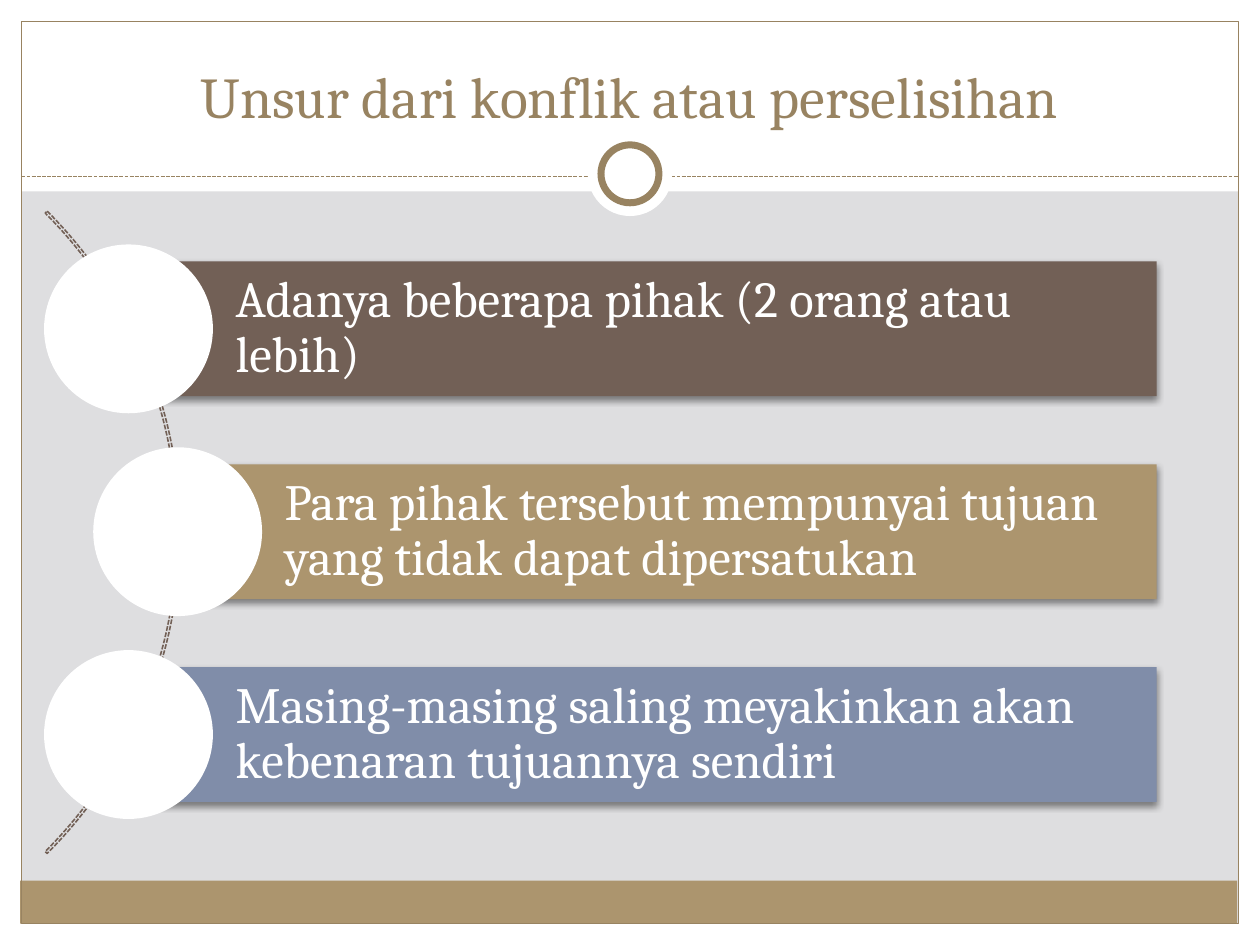
from lxml import etree
from pptx import Presentation
from pptx.dml.color import RGBColor
from pptx.enum.dml import MSO_LINE_DASH_STYLE as Dash
from pptx.enum.shapes import MSO_CONNECTOR as Connector, MSO_SHAPE as Shape
from pptx.enum.text import MSO_ANCHOR as Anchor, MSO_AUTO_SIZE as AutoSize, PP_ALIGN as Align
from pptx.oxml.ns import qn
from pptx.util import Inches, Pt

COLORS = {
    "background": "DEDEE0",
    "white": "FFFFFF",
    "gold": "988361",
    "sand": "AC956E",
    "brown": "726056",
    "blue": "808DA9",
    "shadow": "000000",
}


class SlideBuilder:
    font_name = "Cambria"

    def __init__(self, slide):
        self.slide = slide

    def color(self, name):
        return RGBColor.from_string(COLORS[name])

    def background(self, name):
        fill = self.slide.background.fill
        fill.solid()
        fill.fore_color.rgb = self.color(name)

    def outline(self, line, name, width, dash=None):
        line.color.rgb = self.color(name)
        line.width = Pt(width)
        if dash:
            line.dash_style = dash

    def shape(self, kind, box, fill=None, line=None, width=0.75, dash=None):
        shape = self.slide.shapes.add_shape(kind, *map(Inches, box))
        shape.shadow.inherit = False
        if fill:
            shape.fill.solid()
            shape.fill.fore_color.rgb = self.color(fill)
        else:
            shape.fill.background()
        if line:
            self.outline(shape.line, line, width, dash)
        else:
            shape.line.fill.background()
        return shape

    def circle(self, center_x, center_y, diameter, **style):
        radius = diameter / 2
        box = (center_x - radius, center_y - radius, diameter, diameter)
        return self.shape(Shape.OVAL, box, **style)

    def line(self, start, end, name, width, dash):
        connector = self.slide.shapes.add_connector(
            Connector.STRAIGHT, *map(Inches, start + end))
        self.outline(connector.line, name, width, dash)
        etree.SubElement(connector._element.spPr, qn("a:effectLst"))

    def drop_shadow(self, shape):
        effects = shape._element.spPr.find(qn("a:effectLst"))
        shadow = etree.SubElement(
            effects, qn("a:outerShdw"), blurRad=str(Pt(4)), dist=str(Pt(2)),
            dir="5400000", algn="ctr", rotWithShape="0")
        color = etree.SubElement(shadow, qn("a:srgbClr"), val=COLORS["shadow"])
        etree.SubElement(color, qn("a:alpha"), val="45000")

    def text(self, frame, text, size, name, align, anchor):
        frame.word_wrap = True
        frame.auto_size = AutoSize.NONE
        frame.vertical_anchor = anchor
        paragraph = frame.paragraphs[0]
        paragraph.alignment = align
        run = paragraph.add_run()
        run.text = text
        run.font.name = self.font_name
        run.font.size = Pt(size)
        run.font.color.rgb = self.color(name)
        return paragraph

    def title(self, text, box):
        title = self.slide.shapes.title
        title.left, title.top, title.width, title.height = map(Inches, box)
        self.text(title.text_frame, text, 33, "gold", Align.CENTER, Anchor.BOTTOM)
        # Bring the title in front of the frame
        self.slide.shapes._spTree.append(title._element)

    def bar(self, text, box, fill):
        bar = self.shape(Shape.RECTANGLE, box, fill=fill)
        self.drop_shadow(bar)
        frame = bar.text_frame
        frame.margin_left = Inches(0.85)
        frame.margin_top = frame.margin_right = frame.margin_bottom = Inches(0.08)
        paragraph = self.text(frame, text, 29, "white", Align.LEFT, Anchor.MIDDLE)
        paragraph.line_spacing = 0.9


def main():
    presentation = Presentation()
    presentation.slide_width, presentation.slide_height = Inches(10), Inches(7.5)
    slide = presentation.slides.add_slide(presentation.slide_layouts[5])
    builder = SlideBuilder(slide)

    # Background, white margins and footer band
    builder.background("background")
    margins = [(0, 7.33, 10, 0.17), (0, 0, 10, 1.52),
               (0, 0, 0.17, 7.5), (9.83, 0, 0.17, 7.5)]
    for box in margins:
        builder.shape(Shape.RECTANGLE, box, fill="white")
    builder.shape(Shape.RECTANGLE, (0.16, 6.99, 9.66, 0.34), fill="sand")

    # Frame, divider and ring
    builder.shape(Shape.RECTANGLE, (0.17, 0.17, 9.66, 7.16), line="gold")
    builder.line((0.17, 1.4), (9.83, 1.4), "gold", 0.75, Dash.SQUARE_DOT)
    builder.circle(5, 1.38, 0.67, fill="white")
    builder.circle(5, 1.38, 0.46, fill="white", line="gold", width=4)

    builder.title("Unsur dari konflik atau perselisihan", (0.33, 0.25, 9.33, 0.83))

    # Arc behind the list
    arc = builder.shape(Shape.BLOCK_ARC, (-5.78, 0.62, 7.21, 7.21),
                        line="brown", width=0.9, dash=Dash.SQUARE_DOT)
    for index, value in enumerate((189, 27, 0.003)):
        arc.adjustments[index] = value

    # List of bars, each starting at the centre of its circle
    items = [
        ("Adanya beberapa pihak (2 orang atau lebih)", 1.02, "brown"),
        ("Para pihak tersebut mempunyai tujuan yang tidak dapat dipersatukan",
         1.41, "sand"),
        ("Masing-masing saling meyakinkan akan kebenaran tujuannya sendiri",
         1.02, "blue"),
    ]
    first_center, pitch, bar_height, bar_right = 2.61, 1.61, 1.07, 9.18
    for index, (text, left, fill) in enumerate(items):
        center = first_center + index * pitch
        box = (left, center - bar_height / 2, bar_right - left, bar_height)
        builder.bar(text, box, fill)
        builder.circle(left, center, 1.34, fill="white")

    presentation.save("out.pptx")


if __name__ == "__main__":
    main()
